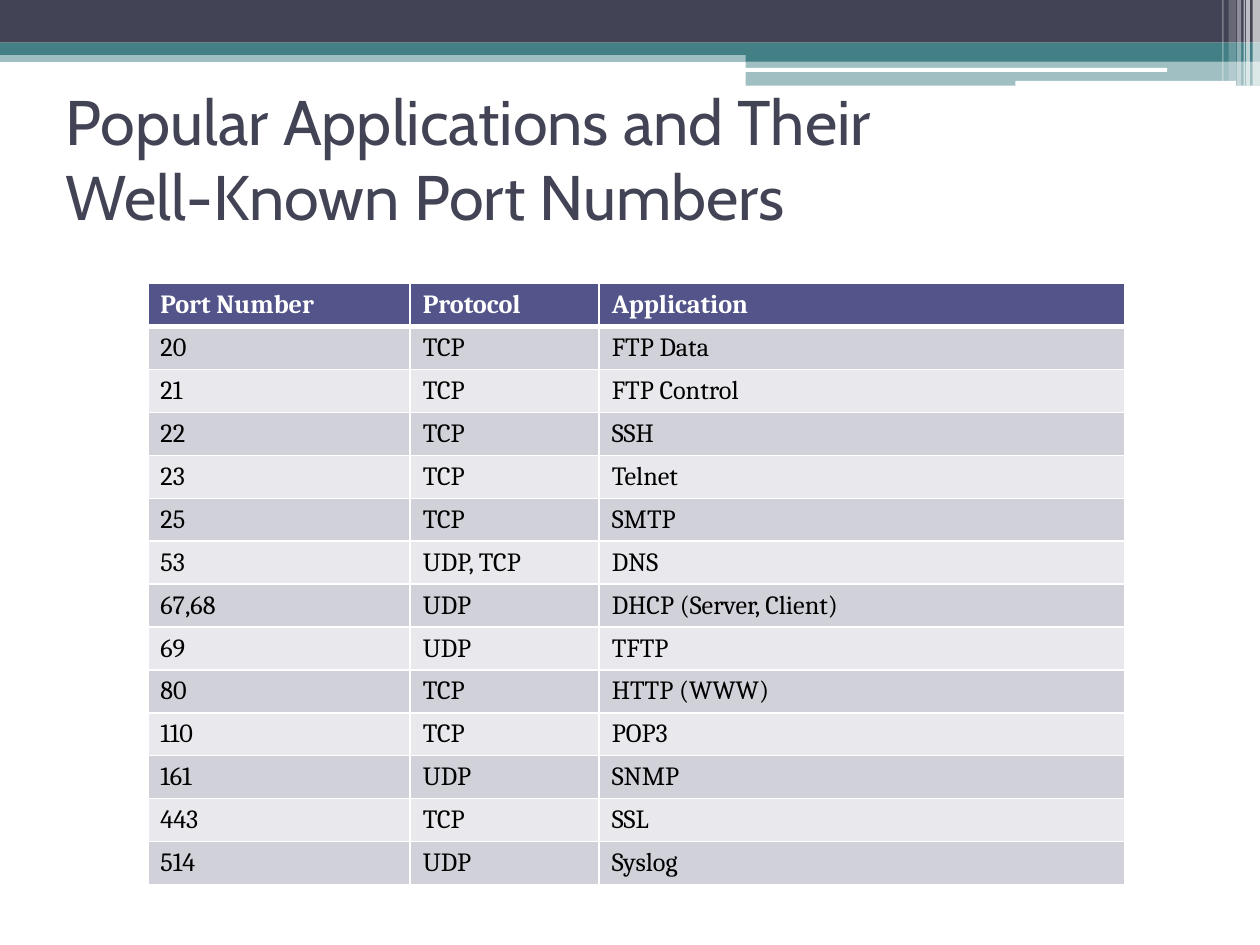
import pptx
import pptx.dml.color
import pptx.enum.shapes
import pptx.enum.text
import pptx.oxml
import pptx.oxml.ns
import pptx.util
from pptx.util import Cm

INK, TEAL, WHITE, BLACK = "424456", "438086", "FFFFFF", "000000"
HEADER, BANDS = "53548A", ("D1D1DA", "E9E9ED")

BARS = [
    (0, 1.02, 25.4, 0.23, TEAL, 50),
    (0, 0, 25.4, 0.86, INK, 100),
    (0, 0.86, 25.4, 0.25, TEAL, 100),
    (15.03, 0.99, 10.37, 0.25, TEAL, 100),
    (15.03, 1.23, 10.37, 0.5, TEAL, 50),
]
PILLS = [(15.02, 1.37, 8.51, 0.08), (20.47, 1.63, 4.45, 0.1)]
STRIPES = [
    (25.25, 0.15, 1.73, 65),
    (25.12, 0.08, 1.73, 65),
    (25.07, 0.03, 1.73, 60),
    (24.94, 0.08, 1.73, 40),
    (24.77, 0.15, 1.63, 20),
    (24.64, 0.03, 1.63, 30),
]
COLUMNS = {"Port Number": 5.29, "Protocol": 3.81, "Application": 10.59}
PORTS = [
    ("20", "TCP", "FTP Data"),
    ("21", "TCP", "FTP Control"),
    ("22", "TCP", "SSH"),
    ("23", "TCP", "Telnet"),
    ("25", "TCP", "SMTP"),
    ("53", "UDP, TCP", "DNS"),
    ("67,68", "UDP", "DHCP (Server, Client)"),
    ("69", "UDP", "TFTP"),
    ("80", "TCP", "HTTP (WWW)"),
    ("110", "TCP", "POP3"),
    ("161", "UDP", "SNMP"),
    ("443", "TCP", "SSL"),
    ("514", "UDP", "Syslog"),
]
ROW_HEIGHT = 0.86


def rgb(value):
    """Turn a hex string into a colour."""
    return pptx.dml.color.RGBColor.from_string(value)


def fill_solid(fill, color):
    """Give a fill one solid colour."""
    fill.solid()
    fill.fore_color.rgb = rgb(color)


def write(tf, text, font="Cambria", size=15, color=BLACK, bold=False):
    """Write left-aligned text, breaking the line at each newline."""
    p = tf.paragraphs[0]
    p.alignment = pptx.enum.text.PP_ALIGN.LEFT
    for i, line in enumerate(text.split("\n")):
        if i:
            p.add_line_break()
        r = p.add_run()
        r.text = line
        r.font.name, r.font.size = font, pptx.util.Pt(size)
        r.font.bold, r.font.color.rgb = bold, rgb(color)


def add_bar(s, x, y, w, h, color, opacity=100, rounded=False):
    """Add a borderless bar with an opacity in percent."""
    kinds = pptx.enum.shapes.MSO_SHAPE
    kind = kinds.ROUNDED_RECTANGLE if rounded else kinds.RECTANGLE
    sp = s.shapes.add_shape(kind, Cm(x), Cm(y), Cm(w), Cm(h))
    sp.shadow.inherit = False
    sp.line.fill.background()
    fill_solid(sp.fill, color)
    if opacity < 100:
        clr = sp.element.spPr.find(".//" + pptx.oxml.ns.qn("a:srgbClr"))
        ns = pptx.oxml.ns.nsdecls("a")
        clr.append(pptx.oxml.parse_xml(f'<a:alpha {ns} val="{opacity * 1000}"/>'))


def add_banner(s):
    """Add the bars, pills and stripes along the top edge."""
    for bar in BARS:
        add_bar(s, *bar)
    for pill in PILLS:
        add_bar(s, *pill, WHITE, rounded=True)
    for x, w, h, opacity in STRIPES:
        add_bar(s, x, 0, w, h, WHITE, opacity)


def set_title(s, text):
    """Place the title placeholder in front of the banner and fill it."""
    sp = s.shapes.title
    sp.element.getparent().append(sp.element)
    sp.left, sp.top, sp.width, sp.height = Cm(1.07), Cm(1.7), Cm(23.5), Cm(2.97)
    tf = sp.text_frame
    tf.word_wrap = True
    tf.auto_size = pptx.enum.text.MSO_AUTO_SIZE.NONE
    tf.vertical_anchor = pptx.enum.text.MSO_ANCHOR.MIDDLE
    write(tf, text, font="Cabin", size=36, color=INK)


def set_borders(cell, **widths):
    """Draw white cell borders, with widths in points keyed by side."""
    tcPr = cell._tc.get_or_add_tcPr()
    for i, (side, width) in enumerate(widths.items()):
        ln = pptx.oxml.parse_xml(
            f'<a:ln{side} {pptx.oxml.ns.nsdecls("a")} w="{pptx.util.Pt(width)}">'
            f'<a:solidFill><a:srgbClr val="{WHITE}"/></a:solidFill></a:ln{side}>'
        )
        tcPr.insert(i, ln)


def add_port_table(s):
    """Add the table of ports with a header and banded rows."""
    rows = [tuple(COLUMNS), *PORTS]
    frame = s.shapes.add_table(
        len(rows), len(COLUMNS), Cm(2.98), Cm(5.72),
        Cm(sum(COLUMNS.values())), Cm(ROW_HEIGHT * len(rows)),
    )
    table = frame.table
    for column, width in zip(table.columns, COLUMNS.values()):
        column.width = Cm(width)
    for i, values in enumerate(rows):
        header = i == 0
        table.rows[i].height = Cm(ROW_HEIGHT)
        for j, value in enumerate(values):
            cell = table.cell(i, j)
            fill_solid(cell.fill, HEADER if header else BANDS[(i - 1) % 2])
            set_borders(cell, L=1, R=1, T=3 if i == 1 else 1, B=3 if header else 1)
            write(cell.text_frame, value, color=WHITE if header else BLACK, bold=header)


def main():
    """Build and save the slide."""
    prs = pptx.Presentation()
    prs.slide_width, prs.slide_height = Cm(25.4), Cm(19.05)
    s = prs.slides.add_slide(prs.slide_layouts.get_by_name("Title Only"))
    fill_solid(s.background.fill, WHITE)
    add_banner(s)
    set_title(s, "Popular Applications and Their \nWell-Known Port Numbers")
    add_port_table(s)
    prs.save("out.pptx")


if __name__ == "__main__":
    main()
